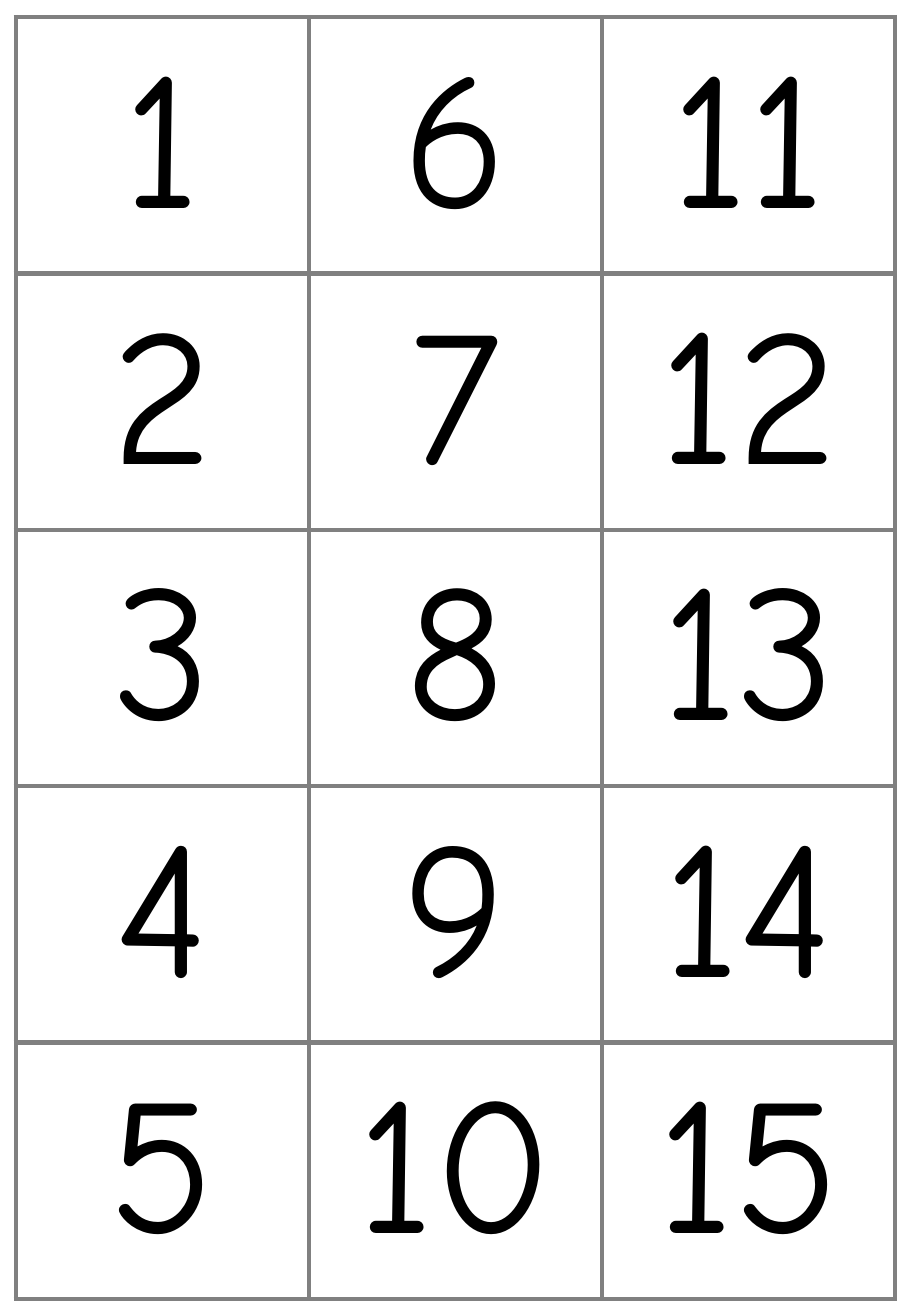
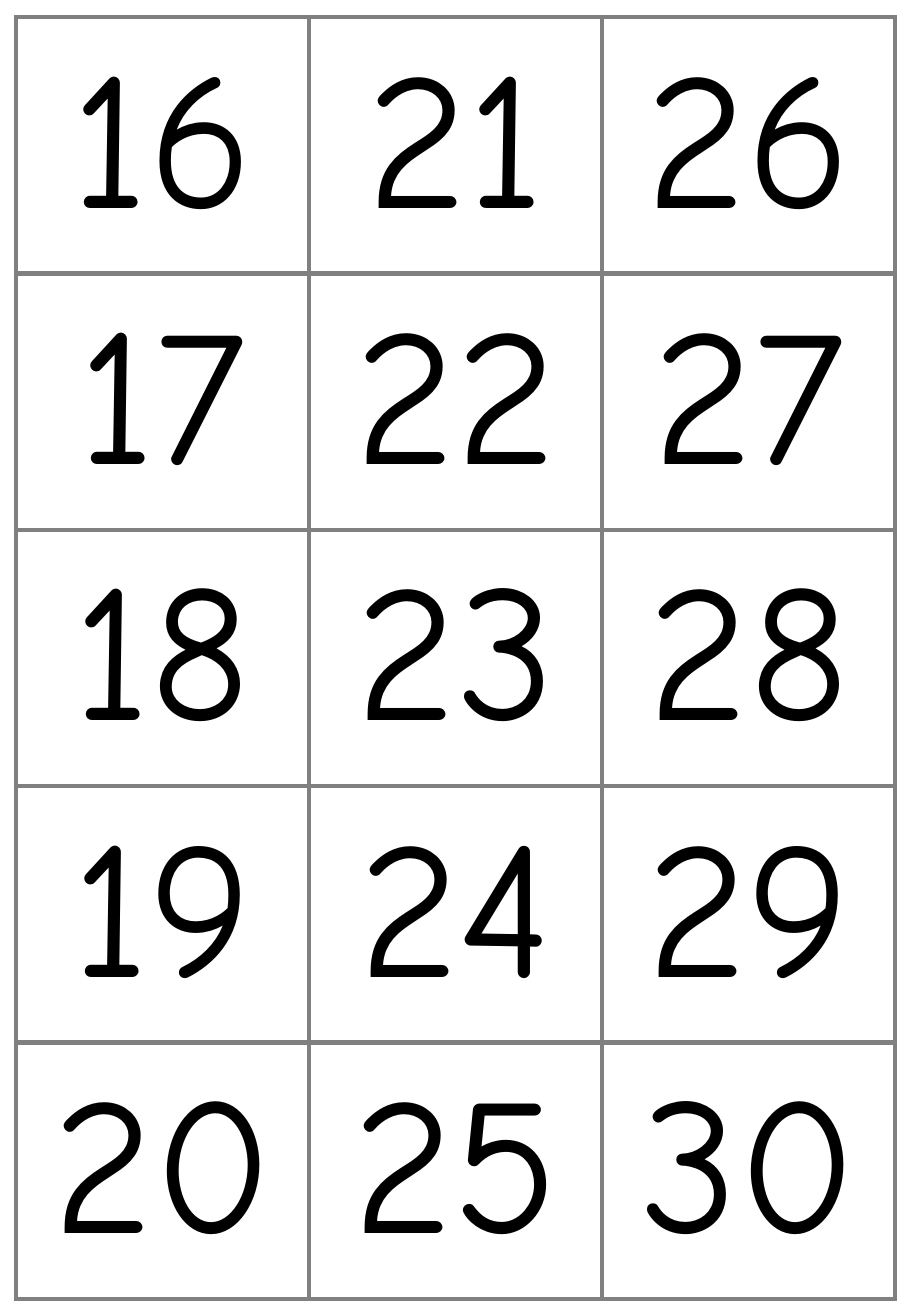
import dataclasses

import lxml.etree
import pptx
import pptx.dml.color
import pptx.enum.text
import pptx.oxml.ns
import pptx.util
from pptx.util import Inches

ROWS = 5
COLUMNS = 3
FIRST_NUMBERS = (1, 16)


@dataclasses.dataclass(frozen=True)
class Theme:
    paper: str = "FFFFFF"
    ink: str = "000000"
    grid: str = "808080"
    font: str = "Comic Neue"
    number_size: int = 115
    grid_width: int = 3


class CardDeck:
    def __init__(self, theme):
        self.theme = theme
        self.presentation = pptx.Presentation()
        self.presentation.slide_width = Inches(7.5)
        self.presentation.slide_height = Inches(10.83)
        self.slide = None

    def add_slide(self):
        blank_layout = self.presentation.slide_layouts[6]
        self.slide = self.presentation.slides.add_slide(blank_layout)
        background = self.slide.background.fill
        background.solid()
        background.fore_color.rgb = self.color(self.theme.paper)

    def color(self, value):
        return pptx.dml.color.RGBColor.from_string(value)

    def add_cards(self, first_number):
        frame = self.slide.shapes.add_table(
            ROWS, COLUMNS, Inches(0.13), Inches(0.14), Inches(7.24), Inches(10.55)
        )
        table = frame.table
        table.first_row = False
        table.horz_banding = False
        for column in range(COLUMNS):
            for row in range(ROWS):
                number = first_number + column * ROWS + row
                self.fill_card(table.cell(row, column), number)

    def fill_card(self, cell, number):
        self.add_borders(cell)
        cell.fill.solid()
        cell.fill.fore_color.rgb = self.color(self.theme.paper)
        cell.vertical_anchor = pptx.enum.text.MSO_ANCHOR.MIDDLE
        cell.text = str(number)
        paragraph = cell.text_frame.paragraphs[0]
        paragraph.alignment = pptx.enum.text.PP_ALIGN.CENTER
        paragraph.font.name = self.theme.font
        paragraph.font.size = pptx.util.Pt(self.theme.number_size)
        paragraph.font.color.rgb = self.color(self.theme.ink)

    def add_borders(self, cell):
        qn = pptx.oxml.ns.qn
        properties = cell._tc.get_or_add_tcPr()
        width = str(pptx.util.Pt(self.theme.grid_width))
        for side in ("a:lnL", "a:lnR", "a:lnT", "a:lnB"):
            line = lxml.etree.SubElement(properties, qn(side), w=width)
            fill = lxml.etree.SubElement(line, qn("a:solidFill"))
            lxml.etree.SubElement(fill, qn("a:srgbClr"), val=self.theme.grid)


def main():
    deck = CardDeck(Theme())
    for first_number in FIRST_NUMBERS:
        deck.add_slide()
        deck.add_cards(first_number)
    deck.presentation.save("out.pptx")


if __name__ == "__main__":
    main()
